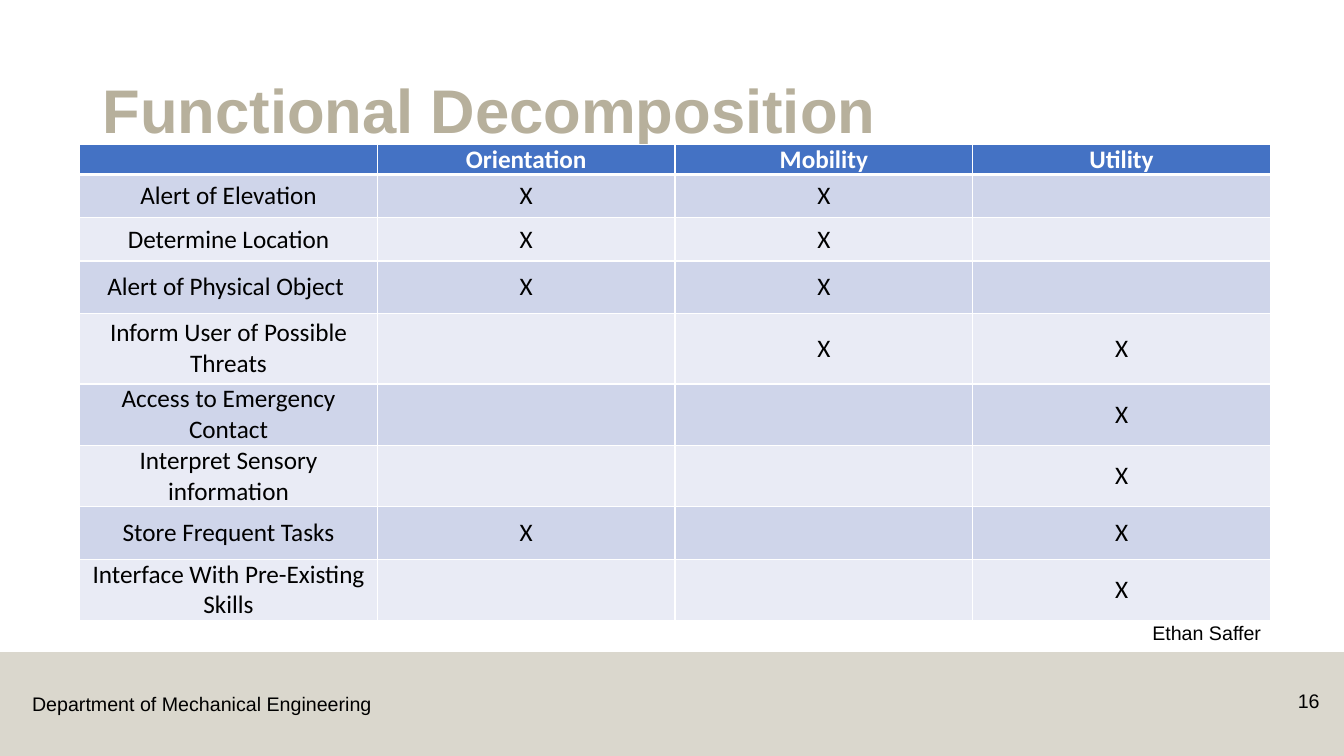
import pptx
import pptx.util
import pptx.dml.color
import pptx.enum.shapes
import pptx.enum.text
from dataclasses import dataclass
from lxml import etree

SLIDE_WIDTH = pptx.util.Inches(13.333)
SLIDE_HEIGHT = pptx.util.Inches(7.5)
ALIGN = pptx.enum.text.PP_ALIGN
ANCHOR = pptx.enum.text.MSO_ANCHOR


@dataclass(frozen=True)
class Theme:
    sand: str = "B7B09C"
    ink: str = "000000"
    white: str = "FFFFFF"
    header: str = "4472C4"
    bands: tuple = ("CFD5EA", "E9EBF5")
    heading_font: str = "Arial"
    table_font: str = "Calibri"
    title_size: int = 44
    table_size: int = 18
    small_size: int = 14


THEME = Theme()

CATEGORIES = ["Orientation", "Mobility", "Utility"]

# Function, categories it serves, row height in % of the slide
FUNCTIONS = [
    ("Alert of Elevation", {"Orientation", "Mobility"}, 5.73),
    ("Determine Location", {"Orientation", "Mobility"}, 5.73),
    ("Alert of Physical Object ", {"Orientation", "Mobility"}, 6.93),
    ("Inform User of Possible Threats", {"Mobility", "Utility"}, 9.33),
    ("Access to Emergency Contact", {"Utility"}, 8.13),
    ("Interpret Sensory information", {"Utility"}, 8.13),
    ("Store Frequent Tasks", {"Orientation", "Utility"}, 6.93),
    ("Interface With Pre-Existing Skills", {"Utility"}, 8.13),
]
HEADER_HEIGHT = 3.87


def across(percent):
    return round(SLIDE_WIDTH * percent / 100)


def down(percent):
    return round(SLIDE_HEIGHT * percent / 100)


def area(left, top, width, height):
    return across(left), down(top), across(width), down(height)


def rgb(color):
    return pptx.dml.color.RGBColor.from_string(color)


def add_xml(parent, tag, **attributes):
    return etree.SubElement(parent, pptx.oxml.ns.qn(tag), attributes)


def style_font(font, name, size, color, bold=False):
    font.name = name
    font.size = pptx.util.Pt(size)
    font.color.rgb = rgb(color)
    font.bold = bold


def add_label(slide, place, text, size=THEME.small_size, color=THEME.ink, bold=False,
              align=ALIGN.LEFT, anchor=ANCHOR.TOP, wrap=True, line_spacing=None):
    frame = slide.shapes.add_textbox(*area(*place)).text_frame
    frame.word_wrap = wrap
    frame.vertical_anchor = anchor
    line = frame.paragraphs[0]
    line.text = text
    line.alignment = align
    line.line_spacing = line_spacing
    style_font(line.font, THEME.heading_font, size, color, bold)


def add_footer_band(slide):
    band = slide.shapes.add_shape(
        pptx.enum.shapes.MSO_SHAPE.RECTANGLE, *area(0, 86.27, 100, 13.73))
    band.shadow.inherit = False
    band.line.fill.background()
    band.fill.solid()
    band.fill.fore_color.rgb = rgb(THEME.sand)
    # Half transparent
    tint = band._element.spPr.find(".//" + pptx.oxml.ns.qn("a:srgbClr"))
    add_xml(tint, "a:alpha", val="50000")


def add_borders(cell, bottom_width):
    properties = cell._tc.get_or_add_tcPr()
    for side, width in (("L", 1), ("R", 1), ("T", 1), ("B", bottom_width)):
        edge = add_xml(properties, f"a:ln{side}", w=str(pptx.util.Pt(width)))
        add_xml(add_xml(edge, "a:solidFill"), "a:srgbClr", val=THEME.white)


def fill_cell(cell, text, fill, color, bold=False, bottom_width=1):
    add_borders(cell, bottom_width)
    cell.fill.solid()
    cell.fill.fore_color.rgb = rgb(fill)
    cell.margin_left = cell.margin_right = cell.margin_top = cell.margin_bottom = 0
    cell.vertical_anchor = ANCHOR.MIDDLE
    entry = cell.text_frame.paragraphs[0]
    entry.text = text
    entry.alignment = ALIGN.CENTER
    style_font(entry.font, THEME.table_font, THEME.table_size, color, bold)


def add_function_matrix(slide, left, top, width):
    heights = [HEADER_HEIGHT] + [height for _, _, height in FUNCTIONS]
    headings = [""] + CATEGORIES
    matrix = slide.shapes.add_table(
        len(heights), len(headings), *area(left, top, width, sum(heights))).table
    for row, height in zip(matrix.rows, heights):
        row.height = down(height)

    # Header row
    for column, heading in enumerate(headings):
        fill_cell(matrix.cell(0, column), heading, THEME.header, THEME.white,
                  bold=True, bottom_width=3)

    # Banded rows with a mark for each category served
    for index, (function, served, _) in enumerate(FUNCTIONS):
        marks = ["X" if category in served else "" for category in CATEGORIES]
        for column, text in enumerate([function] + marks):
            fill_cell(matrix.cell(index + 1, column), text,
                      THEME.bands[index % 2], THEME.ink)


def main():
    deck = pptx.Presentation()
    deck.slide_width = SLIDE_WIDTH
    deck.slide_height = SLIDE_HEIGHT
    slide = deck.slides.add_slide(deck.slide_layouts[6])

    # Footer
    add_footer_band(slide)
    add_label(slide, (1.65, 90.93, 26.93, 4.53), "Department of Mechanical Engineering",
              wrap=False)

    # Title and page number
    add_label(slide, (6.9, 5.33, 86.25, 19.33), "Functional Decomposition",
              size=THEME.title_size, color=THEME.sand, bold=True,
              anchor=ANCHOR.MIDDLE, line_spacing=0.9)
    add_label(slide, (93.15, 90.53, 5.78, 5.33), "16", align=ALIGN.RIGHT)

    # Table and presenter
    add_function_matrix(slide, 5.93, 19.07, 88.6)
    add_label(slide, (85, 81.87, 15, 4.53), "Ethan Saffer", line_spacing=0.9)

    deck.save("out.pptx")


if __name__ == "__main__":
    main()
